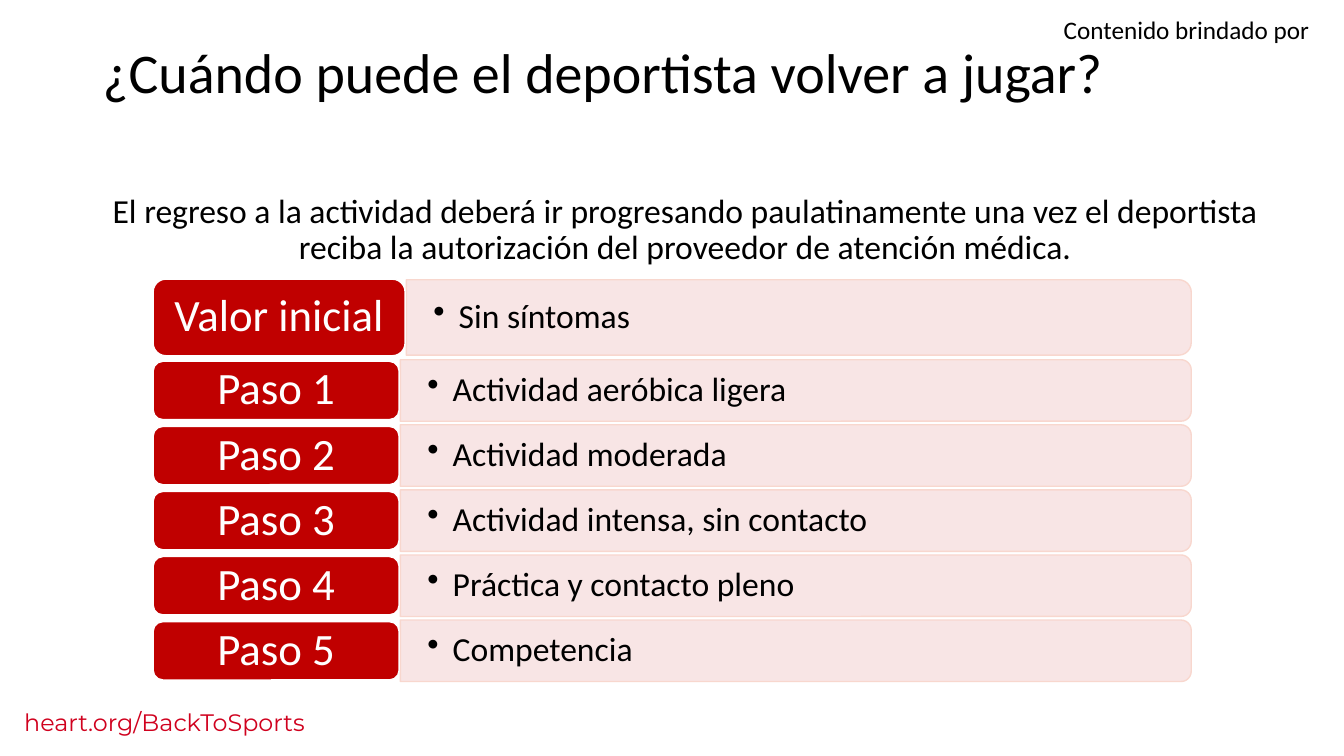
from lxml import etree
from pptx import Presentation
from pptx import util as u
from pptx.dml.color import RGBColor
from pptx.enum import shapes, text
from pptx.oxml.ns import qn

COLORS = {"black": "000000", "white": "FFFFFF", "red": "C00000",
          "link": "D0011E", "edge": "F8D7CE"}
CENTER = text.PP_ALIGN.CENTER
MIDDLE = text.MSO_ANCHOR.MIDDLE

prs = Presentation()
prs.slide_width, prs.slide_height = u.Cm(33.87), u.Cm(19.05)
s = prs.slides.add_slide(prs.slide_layouts[6])


def write(sp, words, size, color="black", font="Calibri", frame={}, para={}, bullet=False):
    tf = sp.text_frame
    for name, value in {"word_wrap": True, **frame}.items():
        setattr(tf, name, value)
    p = tf.paragraphs[0]
    for name, value in para.items():
        setattr(p, name, value)
    if bullet:
        pPr = p._p.get_or_add_pPr()
        pPr.set("marL", str(u.Cm(0.64)))
        pPr.set("indent", str(u.Cm(-0.64)))
        etree.SubElement(pPr, qn("a:buChar"), char="•")
    r = p.add_run()
    r.text = words
    for name, value in {"name": font, "size": u.Pt(size)}.items():
        setattr(r.font, name, value)
    r.font.color.rgb = RGBColor.from_string(COLORS[color])


def add_box(kind, left, top, width, height, fill, line, alpha=None):
    sp = s.shapes.add_shape(kind, u.Cm(left), u.Cm(top), u.Cm(width), u.Cm(height))
    sp.shadow.inherit = False
    sp.fill.solid()
    sp.fill.fore_color.rgb = RGBColor.from_string(COLORS[fill])
    if alpha:
        clr = sp._element.spPr.find(qn("a:solidFill"))[0]
        etree.SubElement(clr, qn("a:alpha"), val=str(alpha * 1000))
    sp.line.color.rgb = RGBColor.from_string(COLORS[line])
    sp.line.width = u.Pt(1)
    return sp


captions = [
    ((0.36, 17.7, 11, 0.99), "heart.org/BackToSports",
     {"size": 17, "color": "link", "font": "Montserrat"}),
    ((26.37, 0.23, 7.06, 1.02), "Contenido brindado por",
     {"size": 18, "para": {"alignment": CENTER}}),
    ((2.34, 1.02, 26.19, 2.11), "¿Cuándo puede el deportista volver a jugar?",
     {"size": 40, "para": {"line_spacing": 0.9}}),
    ((2.34, 4.78, 29.85, 2.11),
     "El regreso a la actividad deberá ir progresando paulatinamente una vez "
     "el deportista reciba la autorización del proveedor de atención médica.",
     {"size": 24, "para": {"alignment": CENTER, "line_spacing": 0.9}}),
]
for box, words, style in captions:
    sp = s.shapes.add_textbox(*(u.Cm(v) for v in box))
    write(sp, words, **style)

label_left, bar_right = 3.86, 30.02
first_step, step_pitch = 9.84, 1.64
steps = ["Actividad aeróbica ligera", "Actividad moderada", "Actividad intensa, sin contacto",
         "Práctica y contacto pleno", "Competencia"]
rows = [("Valor inicial", "Sin síntomas", 8, 6.35, 1.93, 1.9)]
for i, detail in enumerate(steps):
    rows.append((f"Paso {i + 1}", detail, first_step + i * step_pitch, 6.2, 1.47, 1.55))

label_frame = {"vertical_anchor": MIDDLE, "margin_left": u.Cm(0.33), "margin_right": u.Cm(0.33),
               "margin_top": u.Cm(0.18), "margin_bottom": u.Cm(0.18)}
detail_frame = {"vertical_anchor": MIDDLE, "margin_left": u.Cm(0.68), "margin_right": u.Cm(0.68),
                "margin_top": 0, "margin_bottom": 0}

for name, detail, middle, label_width, label_height, bar_height in rows:
    bar_left = label_left + label_width + 0.03
    bar_width = bar_right - bar_left
    bar = add_box(shapes.MSO_SHAPE.ROUND_2_SAME_RECTANGLE,
                  bar_left + (bar_width - bar_height) / 2, middle - bar_width / 2,
                  bar_height, bar_width, "red", "edge", 10)
    bar.rotation = 90
    sp = s.shapes.add_textbox(u.Cm(bar_left), u.Cm(middle - bar_height / 2),
                              u.Cm(bar_width), u.Cm(bar_height))
    write(sp, detail, 24, frame=detail_frame, para={"line_spacing": 0.9}, bullet=True)
    label = add_box(shapes.MSO_SHAPE.ROUNDED_RECTANGLE, label_left, middle - label_height / 2,
                    label_width, label_height, "red", "white")
    write(label, name, 32, "white", frame=label_frame,
          para={"alignment": CENTER, "line_spacing": 0.9})

prs.save("out.pptx")
